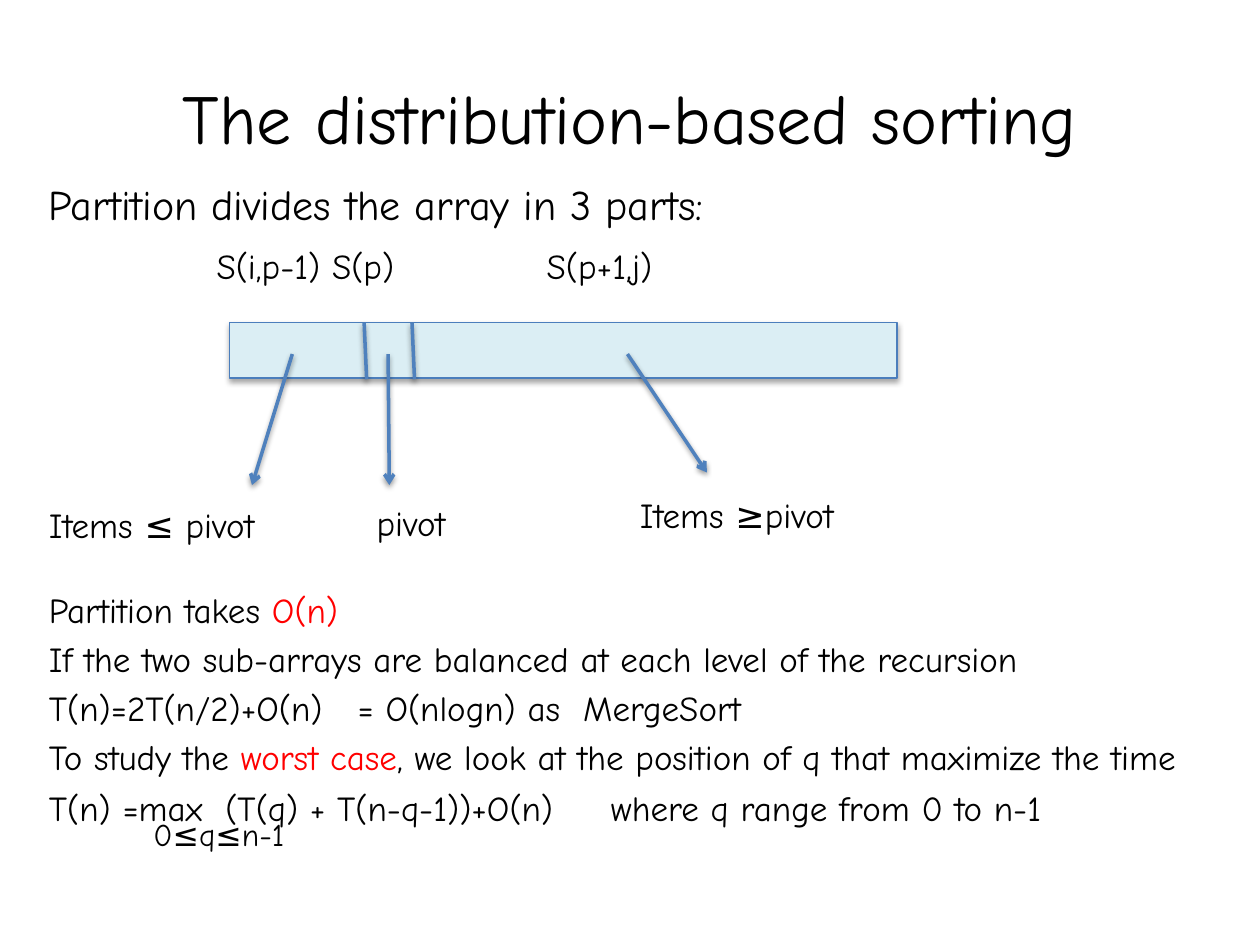
from dataclasses import dataclass

from lxml import etree
from pptx import Presentation
from pptx.dml.color import RGBColor
from pptx.enum.shapes import MSO_CONNECTOR, MSO_SHAPE
from pptx.enum.text import MSO_ANCHOR, PP_ALIGN
from pptx.oxml.ns import qn
from pptx.util import Inches, Pt

RECTANGLE = MSO_SHAPE.RECTANGLE
STRAIGHT = MSO_CONNECTOR.STRAIGHT
TOP, MIDDLE = MSO_ANCHOR.TOP, MSO_ANCHOR.MIDDLE
LEFT, CENTER = PP_ALIGN.LEFT, PP_ALIGN.CENTER
COLUMNS, ROWS = 100, 75


@dataclass(frozen=True)
class Theme:
    font: str = "Comic Neue"
    text: str = "000000"
    accent: str = "FF0000"
    line: str = "4F81BD"
    border: str = "4B7EBC"
    fill: str = "DBEEF4"
    title_size: int = 40
    heading_size: int = 24
    body_size: int = 20
    note_size: int = 18


class SlideBuilder:
    """Draws on one slide; lengths are columns and rows of the grid."""

    def __init__(self, presentation, theme):
        self.theme = theme
        self.slide = presentation.slides.add_slide(presentation.slide_layouts[6])
        self.column = presentation.slide_width / COLUMNS
        self.row = presentation.slide_height / ROWS

    def place(self, *lengths):
        units = (self.column, self.row) * 2
        return [round(length * unit) for length, unit in zip(lengths, units)]

    def text_box(self, area, anchor=TOP):
        frame = self.slide.shapes.add_textbox(*self.place(*area)).text_frame
        frame.word_wrap = True
        frame.vertical_anchor = anchor
        return frame

    def paragraph(self, frame, runs, size, before=0, tabs=(), align=LEFT):
        """Each run is a (text, colour) pair; tab stops are in columns."""
        first = frame.paragraphs[0]
        paragraph = frame.add_paragraph() if first.runs else first
        paragraph.alignment = align
        paragraph.space_before = Pt(before)
        for text, color in runs:
            run = paragraph.add_run()
            run.text = text
            run.font.name = self.theme.font
            run.font.size = Pt(size)
            run.font.color.rgb = RGBColor.from_string(color)
        if tabs:
            properties = paragraph._p.get_or_add_pPr()
            tab_list = etree.SubElement(properties, qn("a:tabLst"))
            for stop in tabs:
                position = str(round(stop * self.column))
                etree.SubElement(tab_list, qn("a:tab"), pos=position, algn="l")

    def label(self, text, area, size, anchor=TOP, align=LEFT):
        frame = self.text_box(area, anchor)
        self.paragraph(frame, [(text, self.theme.text)], size, align=align)

    def shadow(self, shape, opacity, distance):
        effects = etree.SubElement(shape._element.spPr, qn("a:effectLst"))
        outer = etree.SubElement(
            effects, qn("a:outerShdw"), blurRad=str(Pt(3.1)),
            dist=str(Pt(distance)), dir="5400000", rotWithShape="0")
        color = etree.SubElement(outer, qn("a:srgbClr"), val="000000")
        etree.SubElement(color, qn("a:alpha"), val=str(opacity * 1000))

    def bar(self, area):
        shape = self.slide.shapes.add_shape(RECTANGLE, *self.place(*area))
        shape.fill.solid()
        shape.fill.fore_color.rgb = RGBColor.from_string(self.theme.fill)
        shape.line.color.rgb = RGBColor.from_string(self.theme.border)
        shape.line.width = Pt(0.75)
        self.shadow(shape, 35, 1.8)

    def line(self, start, end, arrow=False):
        connector = self.slide.shapes.add_connector(
            STRAIGHT, *self.place(*start, *end))
        connector.line.color.rgb = RGBColor.from_string(self.theme.line)
        connector.line.width = Pt(2)
        if arrow:
            outline = connector.line._get_or_add_ln()
            etree.SubElement(outline, qn("a:tailEnd"), type="arrow")
        self.shadow(connector, 38, 1.6)


def main():
    presentation = Presentation()
    presentation.slide_width = Inches(10)
    presentation.slide_height = Inches(7.5)
    theme = Theme()
    builder = SlideBuilder(presentation, theme)
    text, accent, body = theme.text, theme.accent, theme.body_size

    # Title
    builder.label("The distribution-based sorting", (5, 3, 90, 12.5),
                  theme.title_size, MIDDLE, CENTER)

    # Body: heading, names of the parts, then the analysis below the diagram
    paragraphs = [
        ([("Partition divides the array in 3 parts:", text)],
         theme.heading_size, 0, ()),
        ([("\tS(i,p-1) S(p)\tS(p+1,j)", text)], body, 8.5, (13.3, 39.5)),
        ([("Partition takes ", text), ("O(n)", accent)], body, 172.8, ()),
        ([("If the two sub-arrays are balanced at each level of the recursion",
           text)], body, 4, ()),
        ([("T(n)=2T(n/2)+O(n)\t= O(nlogn) as\tMergeSort", text)],
         body, 4, (24.5, 42.4)),
        ([("To study the ", text), ("worst case", accent),
          (", we look at the position of q that maximize the time", text)],
         body, 4, ()),
        ([("T(n) =max\t(T(q) + T(n-q-1))+O(n)\twhere q range from 0 to n-1",
           text)], body, 5, (14, 44.6)),
    ]
    frame = builder.text_box((2.9, 13.7, 94.2, 58.8))
    for runs, size, before, tabs in paragraphs:
        builder.paragraph(frame, runs, size, before, tabs)

    # Range written under "max"
    builder.label("0≤q≤n-1", (11.2, 64.2, 16, 4), theme.note_size)

    # Array with its two dividers
    builder.bar((18.2, 25.6, 53, 4.4))
    for left in (28.9, 32.7):
        builder.line((left, 25.6), (left + 0.2, 30.1))

    # Arrows from the parts to their descriptions
    for start, end in (
        (23.2, (20, 38.5)),
        (30.8, (30.9, 38.5)),
        (49.8, (56.1, 37.5)),
    ):
        builder.line((start, 28.1), end, arrow=True)

    # Descriptions of the parts
    for description, left, top, width in (
        ("pivot", 28.9, 39.3, 10.3),
        ("Items ≤ pivot", 2.9, 39.5, 20.3),
        ("Items ≥pivot", 49.8, 38.7, 20.2),
    ):
        builder.label(description, (left, top, width, 4.4), body)

    presentation.save("out.pptx")


if __name__ == "__main__":
    main()
